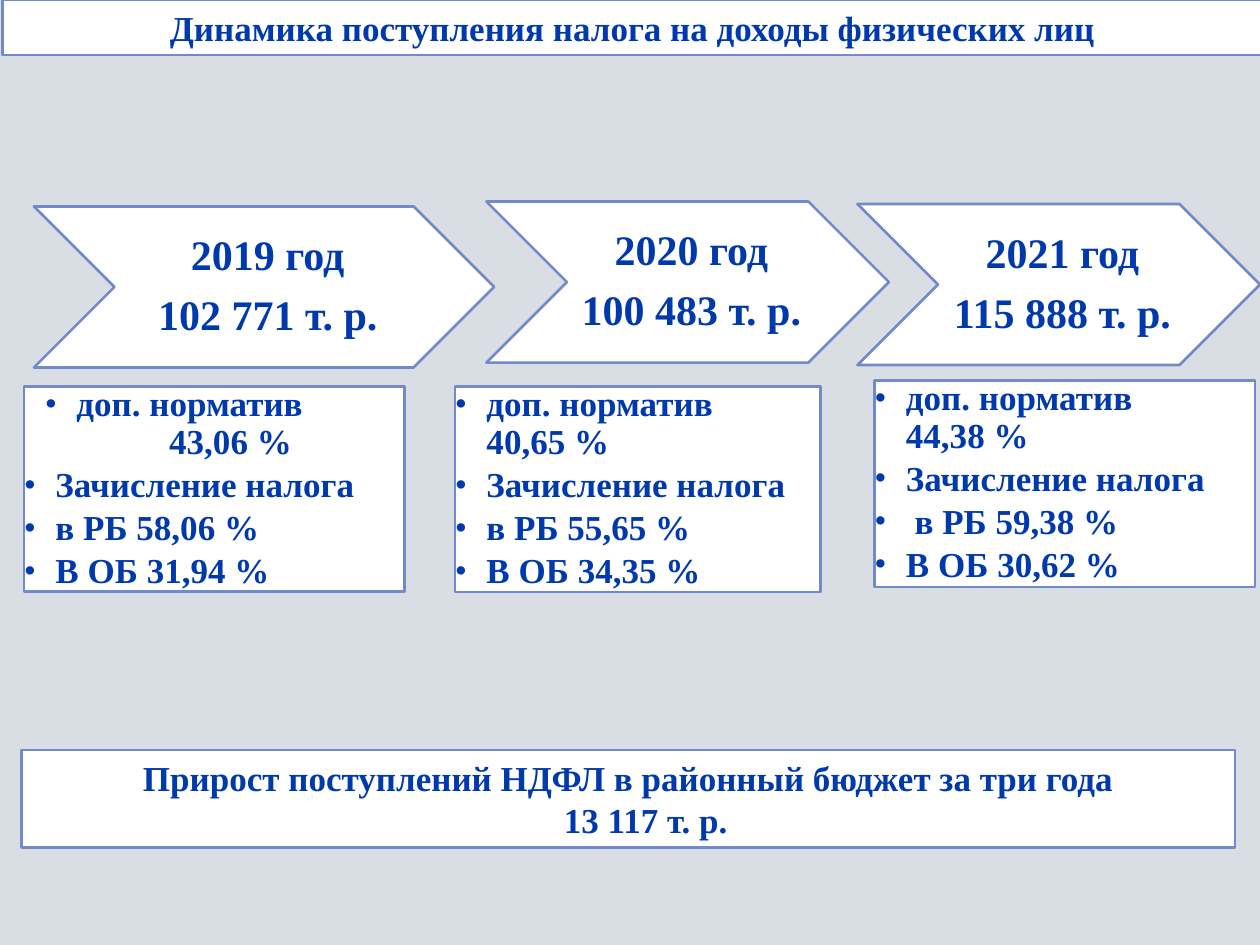
from lxml import etree
from pptx import Presentation
from pptx import util as u
from pptx.dml import color
from pptx.enum import shapes, text
from pptx.oxml import ns

HUES = {"back": "D9DEE5", "fill": "FFFFFF", "edge": "738AC8", "ink": "0039AC"}
FACE = "Times New Roman"
TOP = text.MSO_ANCHOR.TOP
MID = text.MSO_ANCHOR.MIDDLE
LEFT = text.PP_ALIGN.LEFT
MIDST = text.PP_ALIGN.CENTER
EDGES = (7.2, 3.6, 7.2, 3.6)


def hue(name):
    return color.RGBColor.from_string(HUES[name])


class Page:
    def __init__(self, deck):
        self.slide = deck.slides.add_slide(deck.slide_layouts[5])
        back = self.slide.background.fill
        back.solid()
        back.fore_color.rgb = hue("back")

    def style(self, shape, at):
        shape.left, shape.top, shape.width, shape.height = map(u.Pt, at)
        shape.fill.solid()
        shape.fill.fore_color.rgb = hue("fill")
        shape.line.color.rgb = hue("edge")
        shape.line.width = u.Pt(1.5)

    def label(self, shape, lines, size, align=MIDST, anchor=MID, pad=EDGES, lead=1, after=0):
        frame = shape.text_frame
        frame.text = "\n".join(lines)
        frame.word_wrap = True
        frame.auto_size = text.MSO_AUTO_SIZE.NONE
        frame.vertical_anchor = anchor
        (frame.margin_left, frame.margin_top,
         frame.margin_right, frame.margin_bottom) = map(u.Pt, pad)
        for para in frame.paragraphs:
            para.alignment = align
            para.line_spacing = lead
            para.space_before = u.Pt(0)
            para.space_after = u.Pt(after)
            for run in para.runs:
                font = run.font
                font.name, font.size, font.bold = FACE, u.Pt(size), True
                font.color.rgb = hue("ink")
        return frame.paragraphs

    def indent(self, para, left, first=0):
        props = para._p.get_or_add_pPr()
        props.set("marL", str(u.Pt(left)))
        props.set("indent", str(u.Pt(first)))
        return props

    def bullet(self, para, left=18, stop=None):
        props = self.indent(para, left, -18)
        tint = etree.SubElement(props, ns.qn("a:buClr"))
        etree.SubElement(tint, ns.qn("a:srgbClr"), val=HUES["ink"])
        etree.SubElement(props, ns.qn("a:buFont"), typeface=FACE)
        etree.SubElement(props, ns.qn("a:buChar"), char="•")
        if stop:
            tabs = etree.SubElement(props, ns.qn("a:tabLst"))
            etree.SubElement(tabs, ns.qn("a:tab"), pos=str(u.Pt(stop)), algn="l")

    def shape(self, kind, at):
        shape = self.slide.shapes.add_shape(kind, 0, 0, 0, 0)
        shape.shadow.inherit = False
        self.style(shape, at)
        return shape

    def title(self, words, at):
        title = self.slide.shapes.title
        self.style(title, at)
        self.label(title, [words], 20)

    def arrow(self, lines, at):
        shape = self.shape(shapes.MSO_SHAPE.CHEVRON, at)
        self.label(shape, lines, 24, pad=(7.2, 2.9, 2.9, 2.9), lead=0.9, after=8.4)

    def list(self, lines, at, left=18, stop=None):
        shape = self.shape(shapes.MSO_SHAPE.RECTANGLE, at)
        first, *rest = self.label(shape, lines, 20, LEFT, TOP, (0,) * 4, 0.9, 3)
        self.bullet(first, left, stop)
        for para in rest:
            self.bullet(para)

    def total(self, lines, at):
        shape = self.shape(shapes.MSO_SHAPE.RECTANGLE, at)
        self.indent(self.label(shape, lines, 20)[-1], 20)


YEARS = [
    ("2019", "102 771", "\v\t43,06", "в РБ 58,06 %", "31,94",
     (19.4, 118, 263, 92), (13.7, 221, 217.4, 117), 30, 83),
    ("2020", "100 483", "\v40,65", "в РБ 55,65 %", "34,35",
     (278, 115.2, 230, 92), (260, 221, 209, 117.4), 18, None),
    ("2021", "115 888", "\v44,38", " в РБ 59,38 %", "30,62",
     (490, 116.6, 230, 92), (499.7, 217.4, 217.4, 118), 18, None),
]


def main():
    deck = Presentation()
    deck.slide_width, deck.slide_height = u.Pt(720), u.Pt(540)
    page = Page(deck)
    page.title("Динамика поступления налога на доходы физических лиц", (1.4, 0, 720, 31.5))
    for year, total, norm, local, state, tip, box, left, stop in YEARS:
        page.arrow([f"{year} год", f"{total} т. р."], tip)
        page.list([f"доп. норматив{norm} %", "Зачисление налога",
                   local, f"В ОБ {state} %"], box, left, stop)
    page.total(["Прирост поступлений НДФЛ в районный бюджет за три года",
                "13 117 т. р."], (12.2, 428.6, 693.6, 55.7))
    deck.save("out.pptx")


if __name__ == "__main__":
    main()
